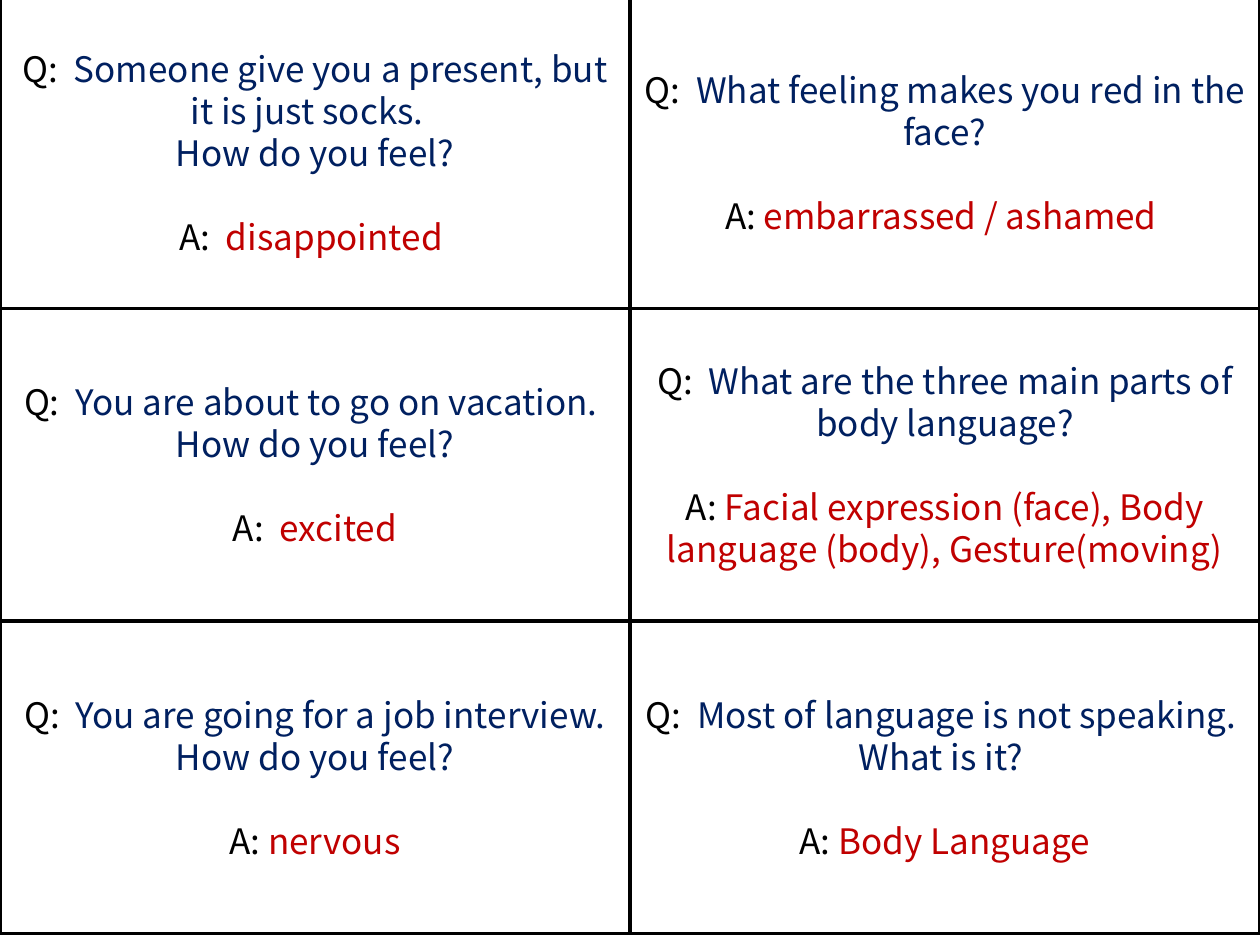
from dataclasses import dataclass

from pptx import Presentation
from pptx.dml.color import RGBColor
from pptx.enum.shapes import MSO_SHAPE
from pptx.enum.text import MSO_ANCHOR, MSO_AUTO_SIZE, PP_ALIGN
from pptx.shapes.autoshape import Shape
from pptx.text.text import _Paragraph
from pptx.util import Cm, Pt

BLACK = RGBColor(0x00, 0x00, 0x00)
WHITE = RGBColor(0xFF, 0xFF, 0xFF)
NAVY = RGBColor(0x00, 0x20, 0x60)
RED = RGBColor(0xC0, 0x00, 0x00)

CARD_WIDTH = Cm(12.7)
CARD_HEIGHT = Cm(6.3)
FIRST_TOP = Cm(-0.08)
ROWS = 3
LINE_HEIGHT = Pt(24)

FRAME_FORMAT = {
    "word_wrap": True,
    "auto_size": MSO_AUTO_SIZE.NONE,
    "vertical_anchor": MSO_ANCHOR.MIDDLE,
}
PARAGRAPH_FORMAT = {
    "alignment": PP_ALIGN.CENTER,
    "line_spacing": LINE_HEIGHT,
    "space_before": Pt(0),
}
FONT_FORMAT = {"name": "Noto Sans CJK KR", "size": Pt(20)}


@dataclass(frozen=True)
class Card:
    question: tuple[str, ...]
    answer: str
    answer_label: str = "A: "


# Cards run down the left column, then down the right one.
CARDS = [
    Card(("Someone give you a present, but it is just socks.  ", "How do you feel?"),
         "disappointed ", "A:  "),
    Card(("You are about to go on vacation. ", "How do you feel?"), "excited", "A:  "),
    Card(("You are going for a job interview.", "How do you feel?"), "nervous"),
    Card(("What feeling makes you red in the face?",), "embarrassed / ashamed "),
    Card(("What are the three main parts of body language?",),
         "Facial expression (face), Body language (body), Gesture(moving)"),
    Card(("Most of language is not speaking.  What is it? ",), "Body Language"),
]


def apply_format(target: object, values: dict) -> None:
    for name, value in values.items():
        setattr(target, name, value)


def add_run(paragraph: _Paragraph, text: str, color: RGBColor) -> None:
    run = paragraph.add_run()
    run.text = text
    apply_format(run.font, FONT_FORMAT)
    run.font.color.rgb = color


def fill_card(shape: Shape, card: Card) -> None:
    shape.shadow.inherit = False
    shape.fill.solid()
    shape.fill.fore_color.rgb = WHITE
    shape.line.color.rgb = BLACK
    shape.line.width = Pt(2)

    frame = shape.text_frame
    apply_format(frame, FRAME_FORMAT)
    paragraph = frame.paragraphs[0]
    add_run(paragraph, "Q:  ", BLACK)
    add_run(paragraph, card.question[0], NAVY)
    for line in card.question[1:]:
        add_run(frame.add_paragraph(), line, NAVY)

    answer = frame.add_paragraph()
    add_run(answer, card.answer_label, BLACK)
    add_run(answer, card.answer, RED)
    for paragraph in frame.paragraphs:
        apply_format(paragraph, PARAGRAPH_FORMAT)
    answer.space_before = LINE_HEIGHT


def main() -> None:
    presentation = Presentation()
    presentation.slide_width = Cm(25.4)
    presentation.slide_height = Cm(19.05)
    slide = presentation.slides.add_slide(presentation.slide_layouts[0])
    subtitle = slide.placeholders[1].element
    subtitle.getparent().remove(subtitle)

    for index, card in enumerate(CARDS):
        column, row = divmod(index, ROWS)
        place = {
            "left": column * CARD_WIDTH,
            "top": FIRST_TOP + row * CARD_HEIGHT,
            "width": CARD_WIDTH,
            "height": CARD_HEIGHT,
        }
        if index == 0:
            shape = slide.shapes.title
            apply_format(shape, place)
        else:
            shape = slide.shapes.add_shape(MSO_SHAPE.RECTANGLE, **place)
        fill_card(shape, card)

    presentation.save("out.pptx")


if __name__ == "__main__":
    main()
